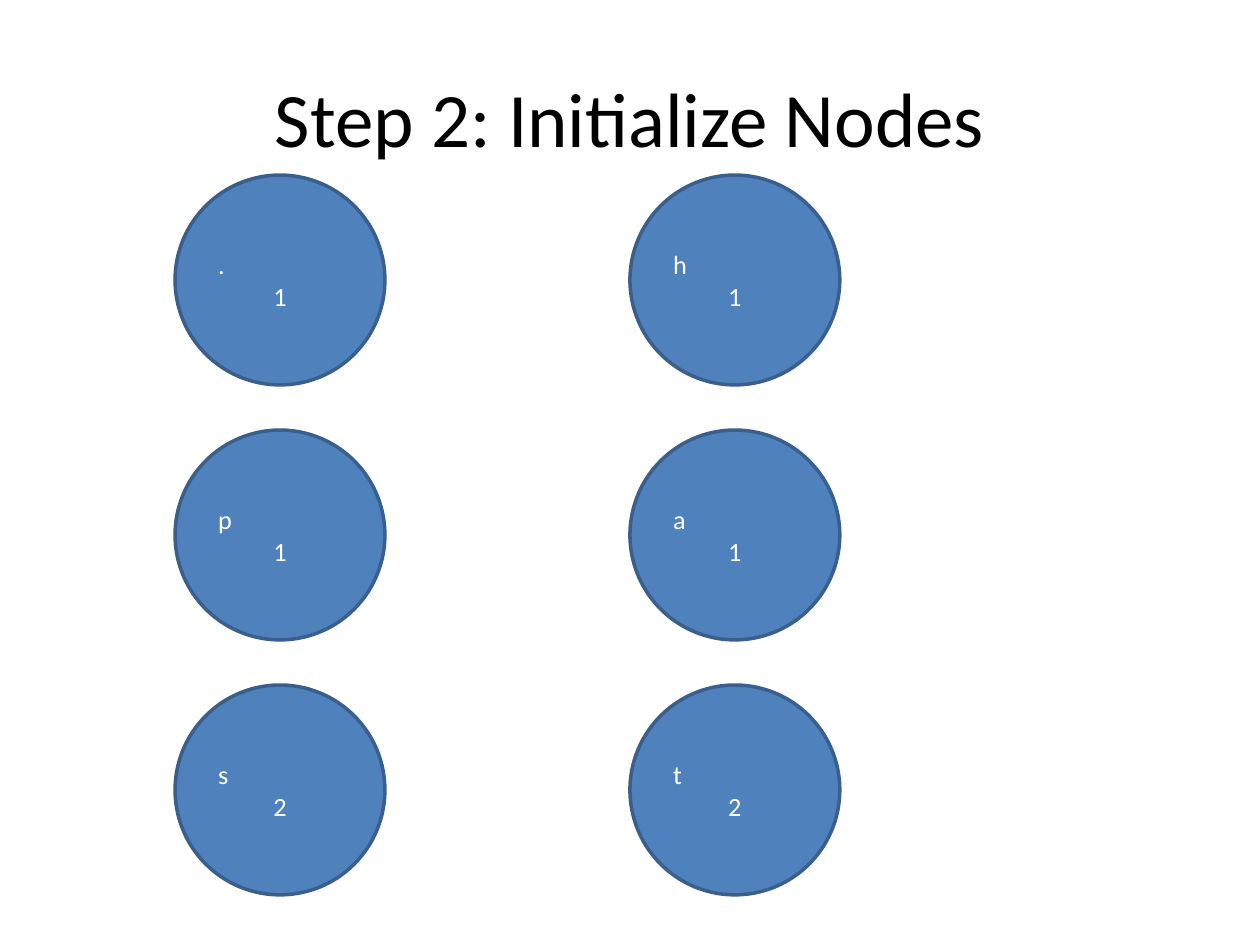
"""Build the slide that shows the initial nodes with their letter counts."""
from pptx import Presentation
from pptx.dml.color import RGBColor
from pptx.enum.shapes import MSO_SHAPE
from pptx.enum.text import MSO_ANCHOR, PP_ALIGN
from pptx.util import Cm, Pt

BLACK = RGBColor(0x00, 0x00, 0x00)
WHITE = RGBColor(0xFF, 0xFF, 0xFF)
NODE_BLUE = RGBColor(0x4F, 0x81, 0xBD)
EDGE_BLUE = RGBColor(0x3A, 0x5F, 0x8C)
OVAL = MSO_SHAPE.OVAL
MIDDLE = MSO_ANCHOR.MIDDLE
LEFT, CENTER = PP_ALIGN.LEFT, PP_ALIGN.CENTER

NODE_ROWS = [
    [(".", "1"), ("h", "1")],
    [("p", "1"), ("a", "1")],
    [("s", "2"), ("t", "2")],
]
FIRST_LEFT, FIRST_TOP = 3.53, 3.53
COLUMN_STEP, ROW_STEP = 9.17, 5.14
DIAMETER = 4.23


class NodeSlide:
    font = "Calibri"
    title_size = Pt(44)
    node_size = Pt(15)

    def __init__(self, slide):
        self.slide = slide

    def add_text(self, paragraph, text, size, color, alignment):
        paragraph.alignment = alignment
        run = paragraph.add_run()
        run.text = text
        run.font.name = self.font
        run.font.size = size
        run.font.color.rgb = color

    def title(self, text, left, top, width, height):
        heading = self.slide.shapes.add_textbox(Cm(left), Cm(top), Cm(width), Cm(height))
        frame = heading.text_frame
        frame.word_wrap = True
        frame.vertical_anchor = MIDDLE
        self.add_text(frame.paragraphs[0], text, self.title_size, BLACK, CENTER)

    def node(self, letter, count, left, top):
        circle = self.slide.shapes.add_shape(OVAL, Cm(left), Cm(top), Cm(DIAMETER), Cm(DIAMETER))
        circle.shadow.inherit = False
        circle.fill.solid()
        circle.fill.fore_color.rgb = NODE_BLUE
        circle.line.color.rgb = EDGE_BLUE
        circle.line.width = Pt(2)
        frame = circle.text_frame
        frame.word_wrap = True
        frame.vertical_anchor = MIDDLE
        self.add_text(frame.paragraphs[0], letter, self.node_size, WHITE, LEFT)
        self.add_text(frame.add_paragraph(), count, self.node_size, WHITE, CENTER)


def main():
    deck = Presentation()
    deck.slide_width, deck.slide_height = Cm(25.4), Cm(19.05)
    page = NodeSlide(deck.slides.add_slide(deck.slide_layouts[6]))
    page.title("Step 2: Initialize Nodes", 1.27, 0.76, 22.86, 3.18)
    for row, nodes in enumerate(NODE_ROWS):
        for column, (letter, count) in enumerate(nodes):
            page.node(letter, count, FIRST_LEFT + column * COLUMN_STEP, FIRST_TOP + row * ROW_STEP)
    deck.save("out.pptx")


if __name__ == "__main__":
    main()
